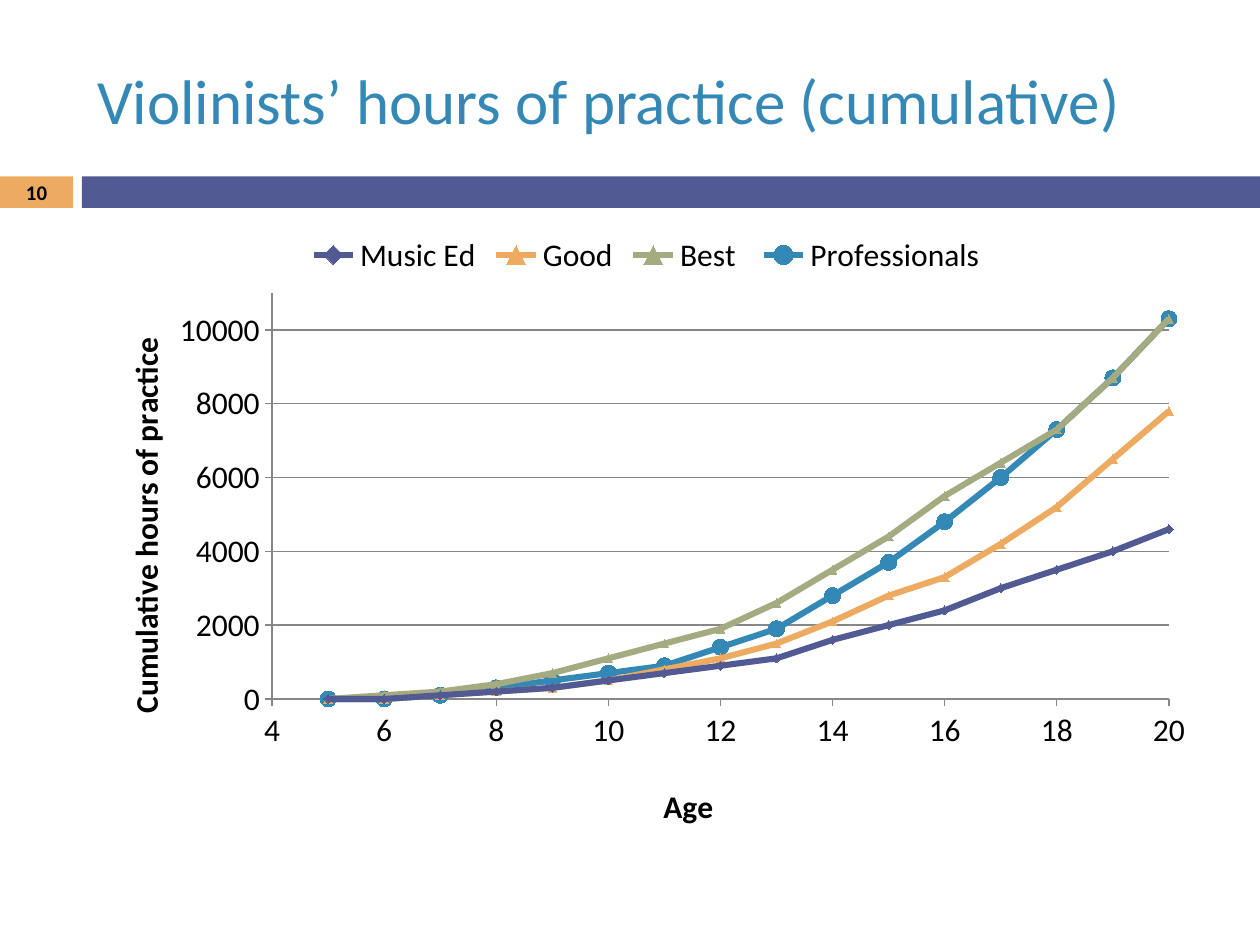
from lxml import etree
from pptx import Presentation
from pptx import util as u
from pptx.chart import data
from pptx.dml.color import RGBColor
from pptx.enum import chart as ch, shapes, text
from pptx.oxml import ns

BLACK = RGBColor(0x00, 0x00, 0x00)
GRAY = RGBColor(0x87, 0x87, 0x87)
INDIGO = RGBColor(0x52, 0x5A, 0x93)
ORANGE = RGBColor(0xED, 0xAA, 0x61)
SAGE = RGBColor(0xA5, 0xAB, 0x81)
BLUE = RGBColor(0x34, 0x88, 0xB6)
FONT = "Calibri"

AGES = range(5, 21)
MARKER = ch.XL_MARKER_STYLE
# name, colour, marker style, marker size, cumulative hours at each age
SERIES = [
    ("Music Ed", INDIGO, MARKER.DIAMOND, 5,
     [0, 0, 100, 200, 300, 500, 700, 900, 1100, 1600, 2000, 2400, 3000, 3500, 4000, 4600]),
    ("Good", ORANGE, MARKER.TRIANGLE, 5,
     [0, 0, 100, 200, 300, 500, 800, 1100, 1500, 2100, 2800, 3300, 4200, 5200, 6500, 7800]),
    ("Best ", SAGE, MARKER.TRIANGLE, 5,
     [0, 100, 200, 400, 700, 1100, 1500, 1900, 2600, 3500, 4400, 5500, 6400, 7300, 8700, 10300]),
    ("Professionals", BLUE, MARKER.CIRCLE, 9,
     [0, 0, 100, 300, 500, 700, 900, 1400, 1900, 2800, 3700, 4800, 6000, 7300, 8700, 10300]),
]


def set_values(target, values):
    for name, value in values.items():
        setattr(target, name, value)


def set_font(font, size, color, bold=False):
    set_values(font, {"name": FONT, "size": u.Pt(size), "bold": bold})
    font.color.rgb = color


def inches(*lengths):
    return [u.Inches(length) for length in lengths]


def add_band(slide, left, width, color):
    band = slide.shapes.add_shape(shapes.MSO_SHAPE.RECTANGLE, *inches(left, 1.4, width, 0.25))
    band.shadow.inherit = False
    band.fill.solid()
    band.fill.fore_color.rgb = color
    band.line.fill.background()


def write_text(shape, words, size, color, alignment, bold=False):
    frame = shape.text_frame
    set_values(frame, {"text": words, "word_wrap": True,
                       "vertical_anchor": text.MSO_ANCHOR.MIDDLE})
    paragraph = frame.paragraphs[0]
    paragraph.alignment = alignment
    set_font(paragraph.runs[0].font, size, color, bold)


def make_layout(**values):
    """Return a manual chart layout, in fractions of the chart's size."""
    layout = etree.Element(ns.qn("c:layout"))
    manual = etree.SubElement(layout, ns.qn("c:manualLayout"))
    for tag, value in values.items():
        etree.SubElement(manual, ns.qn(f"c:{tag}")).set("val", str(value))
    return layout


def replace_layout(parent, layout, position):
    for old in parent.findall(ns.qn("c:layout")):
        parent.remove(old)
    parent.insert(position, layout)


def format_axis(axis, title, low, high, step, x, y):
    set_values(axis, {"minimum_scale": low, "maximum_scale": high, "major_unit": step,
                      "major_tick_mark": ch.XL_TICK_MARK.OUTSIDE,
                      "minor_tick_mark": ch.XL_TICK_MARK.NONE})
    set_font(axis.tick_labels.font, 18, BLACK)
    set_values(axis.tick_labels, {"number_format": "General", "number_format_is_linked": False})
    axis.format.line.color.rgb = GRAY
    frame = axis.axis_title.text_frame
    frame.text = title
    set_font(frame.paragraphs[0].runs[0].font, 18, BLACK, True)
    layout = make_layout(xMode="edge", yMode="edge", x=x, y=y)
    replace_layout(axis.axis_title._element, layout, 1)


def add_practice_chart(slide):
    chart_data = data.XyChartData()
    for name, *_, hours in SERIES:
        series = chart_data.add_series(name)
        for age, value in zip(AGES, hours):
            series.add_data_point(age, value)
    chart = slide.shapes.add_chart(ch.XL_CHART_TYPE.XY_SCATTER_LINES,
                                   *inches(0.67, 1.75, 8.92, 4.92), chart_data).chart
    set_font(chart.font, 10, BLACK)
    set_values(chart, {"has_title": False, "has_legend": True})
    set_values(chart.legend, {"position": ch.XL_LEGEND_POSITION.TOP, "include_in_layout": False})
    set_font(chart.legend.font, 18, BLACK)

    ages, hours_axis = chart.category_axis, chart.value_axis
    format_axis(ages, "Age", 4, 20, 2, 0.51, 0.9)
    format_axis(hours_axis, "Cumulative hours of practice", 0, 11000, 2000, 0.03, 0.18)
    set_values(ages, {"has_major_gridlines": False})
    hours_axis.major_gridlines.format.line.color.rgb = GRAY
    body = hours_axis.axis_title.text_frame._txBody.find(ns.qn("a:bodyPr"))
    body.set("rot", "-5400000")
    body.set("vert", "horz")

    plot = chart.plots[0]
    plot.vary_by_categories = False
    for series, (_, color, style, size, _) in zip(plot.series, SERIES):
        series.smooth = False
        set_values(series.marker, {"style": style, "size": size})
        series.format.line.width = u.Pt(3.5)
        series.format.line.color.rgb = color
        series.marker.format.fill.solid()
        series.marker.format.fill.fore_color.rgb = color
        series.marker.format.line.color.rgb = color

    plot_area = chart._chartSpace.find(".//" + ns.qn("c:plotArea"))
    replace_layout(plot_area, make_layout(layoutTarget="inner", xMode="edge", yMode="edge",
                                          x=0.167, y=0.117, w=0.798, h=0.655), 0)


def main():
    presentation = Presentation()
    set_values(presentation, {"slide_width": u.Inches(10), "slide_height": u.Inches(7.5)})
    slide = presentation.slides.add_slide(presentation.slide_layouts[5])
    add_band(slide, 0, 0.58, ORANGE)
    add_band(slide, 0.65, 9.35, INDIGO)

    title = slide.shapes.title
    set_values(title, dict(zip(("left", "top", "width", "height"),
                               inches(0.67, 0.25, 8.92, 1.08))))
    write_text(title, "Violinists’ hours of practice (cumulative)", 36, BLUE,
               text.PP_ALIGN.LEFT)

    number = slide.shapes.add_textbox(*inches(0, 1.39, 0.58, 0.27))
    write_text(number, "10", 11.9, BLACK, text.PP_ALIGN.CENTER, True)
    add_practice_chart(slide)
    presentation.save("out.pptx")


if __name__ == "__main__":
    main()
